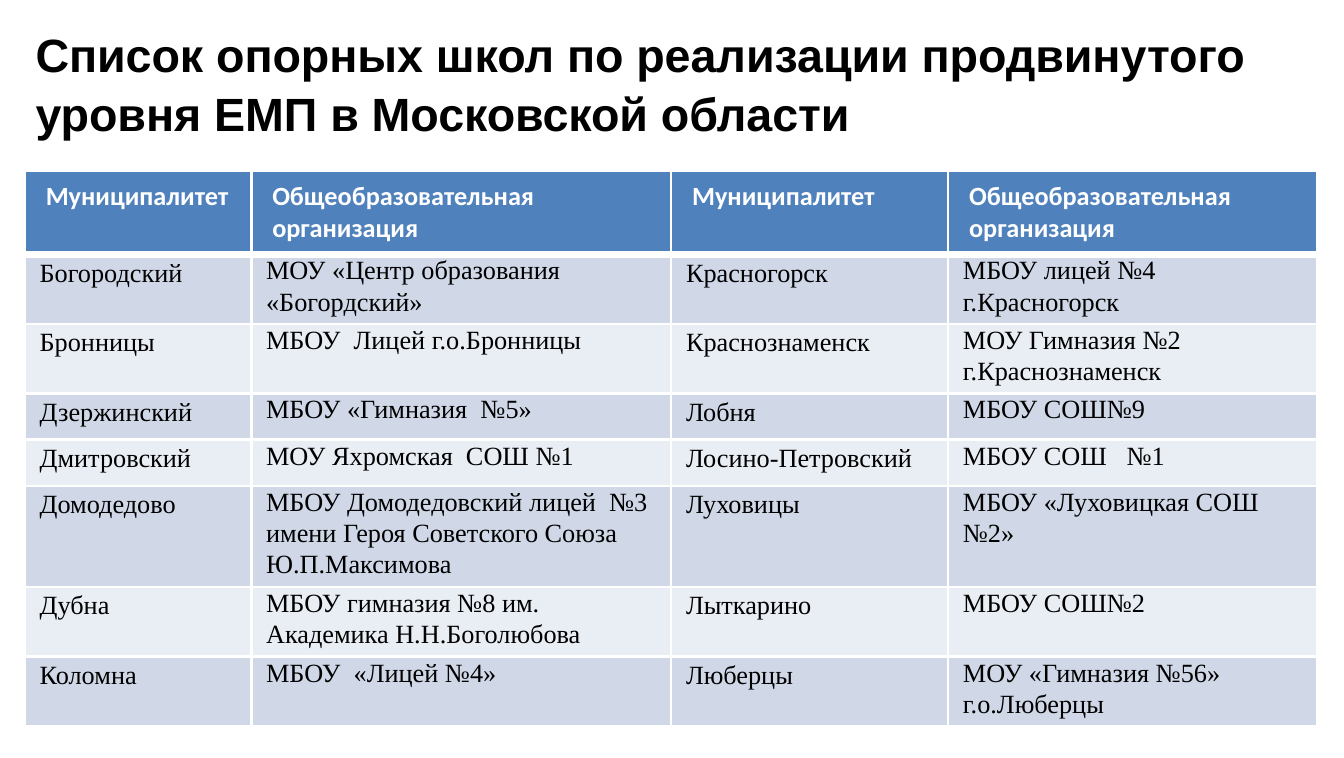
from lxml.etree import SubElement
from pptx import Presentation
from pptx.dml.color import RGBColor
from pptx.enum.text import MSO_ANCHOR, MSO_AUTO_SIZE, PP_ALIGN
from pptx.oxml.ns import qn
from pptx.util import Cm, Pt

COLORS = {
    "text": "000000",
    "white": "FFFFFF",
    "header": "4F81BD",
    "odd": "D0D8E8",
    "even": "E9EDF4",
}

TITLE = "Список опорных школ по реализации продвинутого уровня ЕМП в Московской области"
HEADER = ["Муниципалитет", "Общеобразовательная организация"] * 2
SCHOOLS = [
    ["Богородский", "МОУ «Центр образования «Богордский»",
     "Красногорск", "МБОУ лицей №4 г.Красногорск"],
    ["Бронницы", "МБОУ  Лицей г.о.Бронницы",
     "Краснознаменск", "МОУ Гимназия №2 г.Краснознаменск"],
    ["Дзержинский", "МБОУ «Гимназия  №5»", "Лобня", "МБОУ СОШ№9"],
    ["Дмитровский", "МОУ Яхромская  СОШ №1",
     "Лосино-Петровский", "МБОУ СОШ   №1"],
    ["Домодедово",
     "МБОУ Домодедовский лицей  №3 имени Героя Советского Союза Ю.П.Максимова",
     "Луховицы", "МБОУ «Луховицкая СОШ №2»"],
    ["Дубна", "МБОУ гимназия №8 им. Академика Н.Н.Боголюбова",
     "Лыткарино", "МБОУ СОШ№2"],
    ["Коломна", "МБОУ  «Лицей №4»",
     "Люберцы", "МОУ «Гимназия №56» г.о.Люберцы"],
]
COLUMN_WIDTHS = [2.74, 5.08, 3.35, 4.47]
ROW_HEIGHTS = [0.84, 0.84, 0.84, 0.56, 0.56, 0.84, 0.84, 0.84]


def format_text(frame, font_name, size, color, bold):
    for para in frame.paragraphs:
        for span in para.runs:
            span.font.name = font_name
            span.font.size = Pt(size)
            span.font.bold = bold
            span.font.color.rgb = RGBColor.from_string(COLORS[color])


def add_title(page):
    title = page.shapes.title
    title.left, title.top = Cm(0.43), Cm(0.28)
    title.width, title.height = Cm(14.68), Cm(1.37)
    frame = title.text_frame
    frame.text = TITLE
    frame.word_wrap = True
    frame.auto_size = MSO_AUTO_SIZE.SHAPE_TO_FIT_TEXT
    frame.vertical_anchor = MSO_ANCHOR.TOP
    frame.margin_left = frame.margin_right = 0
    frame.margin_top = frame.margin_bottom = 0
    frame.paragraphs[0].alignment = PP_ALIGN.LEFT
    frame.paragraphs[0].line_spacing = 1.05
    format_text(frame, "Arial", 16, "text", True)


def set_borders(cell, top=1, bottom=1):
    properties = cell._tc.get_or_add_tcPr()
    for side, width in (("L", 1), ("R", 1), ("T", top), ("B", bottom)):
        line = SubElement(properties, qn(f"a:ln{side}"), w=str(Pt(width)))
        fill = SubElement(line, qn("a:solidFill"))
        SubElement(fill, qn("a:srgbClr"), val=COLORS["white"])


def fill_cell(cell, text, color):
    cell.fill.solid()
    cell.fill.fore_color.rgb = RGBColor.from_string(COLORS[color])
    cell.text_frame.text = text


def add_header_cell(cell, text):
    set_borders(cell, bottom=3)
    fill_cell(cell, text, "header")
    format_text(cell.text_frame, "Calibri", 9, "white", True)


def add_school_cell(cell, text, row, column):
    set_borders(cell, top=3 if row == 1 else 1)
    fill_cell(cell, text, "odd" if row % 2 else "even")
    cell.margin_left = cell.margin_right = Cm(0.18)
    cell.margin_top = cell.margin_bottom = 0
    cell.text_frame.paragraphs[0].line_spacing = 1.07 if column % 2 else 1.15
    format_text(cell.text_frame, "Times New Roman", 9, "text", False)


def add_school_table(page):
    frame = page.shapes.add_table(
        len(ROW_HEIGHTS), len(COLUMN_WIDTHS), Cm(0.3), Cm(2.06),
        Cm(sum(COLUMN_WIDTHS)), Cm(sum(ROW_HEIGHTS)))
    table = frame.table
    for column, width in zip(table.columns, COLUMN_WIDTHS):
        column.width = Cm(width)
    for row, height in zip(table.rows, ROW_HEIGHTS):
        row.height = Cm(height)

    # Header row
    for column, text in enumerate(HEADER):
        add_header_cell(table.cell(0, column), text)

    # School rows in alternating colours
    for row, texts in enumerate(SCHOOLS, start=1):
        for column, text in enumerate(texts):
            add_school_cell(table.cell(row, column), text, row, column)


def main():
    deck = Presentation()
    deck.slide_width, deck.slide_height = Cm(16.26), Cm(9.17)
    page = deck.slides.add_slide(deck.slide_layouts[5])
    add_title(page)
    add_school_table(page)
    deck.save("out.pptx")


if __name__ == "__main__":
    main()
